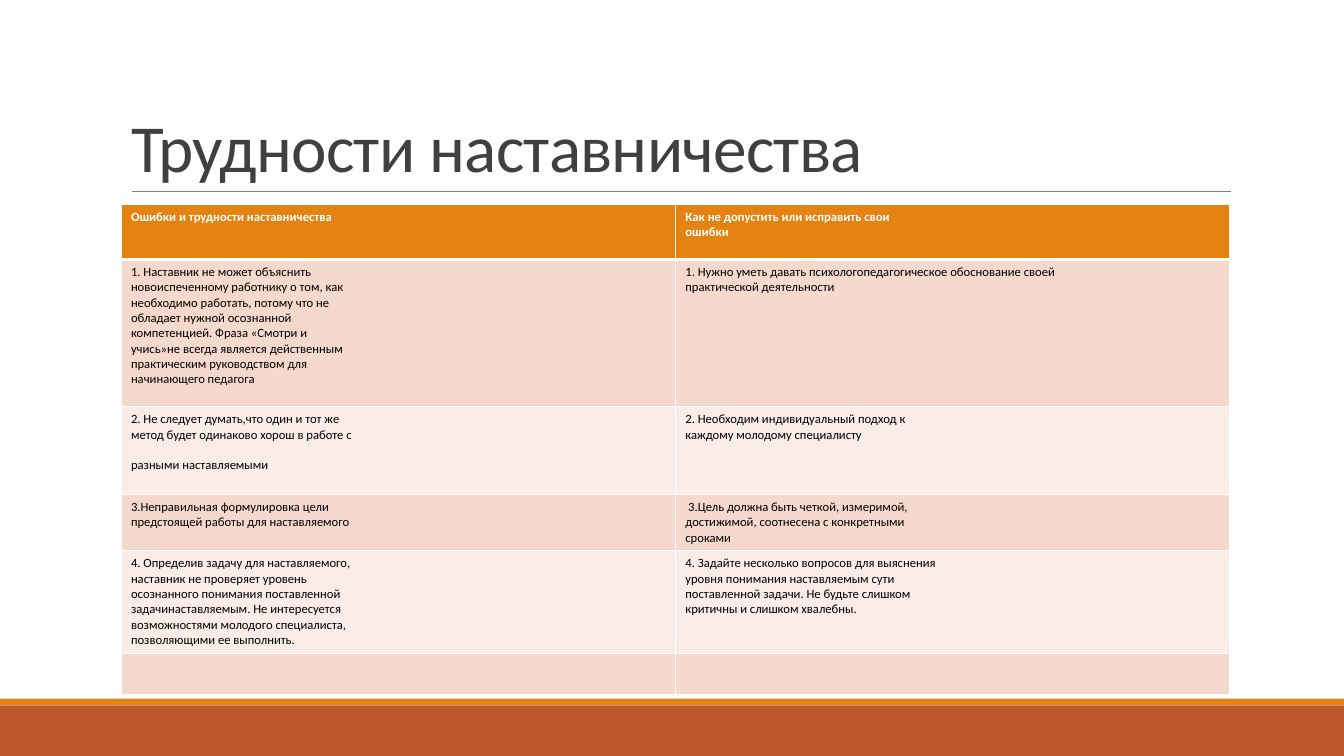
"""Build a slide with a two-column table on the difficulties of mentoring."""
import pptx
import pptx.dml.color
import pptx.enum.shapes
import pptx.enum.text
import pptx.oxml
import pptx.oxml.ns
import pptx.util

WIDTH, HEIGHT = pptx.util.Inches(13.33), pptx.util.Inches(7.5)
ORANGE, RUST, WHITE, BLACK = "E48312", "BD582C", "FFFFFF", "000000"
BANDS = ["F5D9CC", "FAEDE7"]
ROW_HEIGHTS = [0.55, 1.46, 0.87, 0.56, 1.02, 0.41]
GAP_BEFORE = "разными наставляемыми"
ROWS = [
    (["Ошибки и трудности наставничества"],
     ["Как не допустить или исправить свои", "ошибки"]),
    (["1. Наставник не может объяснить",
      "новоиспеченному работнику о том, как",
      "необходимо работать, потому что не",
      "обладает нужной осознанной",
      "компетенцией. Фраза «Смотри и",
      "учись»не всегда является действенным",
      "практическим руководством для",
      "начинающего педагога"],
     ["1. Нужно уметь давать психологопедагогическое обоснование своей",
      "практической деятельности"]),
    (["2. Не следует думать,что один и тот же",
      "метод будет одинаково хорош в работе с",
      GAP_BEFORE],
     ["2. Необходим индивидуальный подход к",
      "каждому молодому специалисту"]),
    (["3.Неправильная формулировка цели",
      "предстоящей работы для наставляемого"],
     [" 3.Цель должна быть четкой, измеримой,",
      "достижимой, соотнесена с конкретными",
      "сроками"]),
    (["4. Определив задачу для наставляемого,",
      "наставник не проверяет уровень",
      "осознанного понимания поставленной",
      "задачинаставляемым. Не интересуется",
      "возможностями молодого специалиста,",
      "позволяющими ее выполнить."],
     ["4. Задайте несколько вопросов для выяснения",
      "уровня понимания наставляемым сути",
      "поставленной задачи. Не будьте слишком",
      "критичны и слишком хвалебны."]),
    ([], []),
]


def across(share):
    """Return a share of the slide's width."""
    return round(WIDTH * share)


def down(share):
    """Return a share of the slide's height."""
    return round(HEIGHT * share)


def colour(target, value):
    """Give a fill or font a solid colour."""
    if hasattr(target, "solid"):
        target.solid()
        target = target.fore_color
    else:
        target = target.color
    target.rgb = pptx.dml.color.RGBColor.from_string(value)


def apply(target, values):
    """Set the attributes named in a dict."""
    for name, value in values.items():
        setattr(target, name, value)


def add_span(para, words, size, shade, bold=False):
    """Add a formatted run to a paragraph."""
    span = para.add_run()
    span.text = words
    apply(span.font, {"name": "Calibri", "size": pptx.util.Pt(size), "bold": bold})
    colour(span.font, shade)
    return span


def add_title(page, words):
    """Place and format the title placeholder."""
    title = page.shapes.title
    apply(title, {"left": across(0.09), "top": down(0.041),
                  "width": across(0.825), "height": down(0.212)})
    apply(title.text_frame, {"word_wrap": True,
                             "auto_size": pptx.enum.text.MSO_AUTO_SIZE.NONE,
                             "vertical_anchor": pptx.enum.text.MSO_ANCHOR.BOTTOM})
    para = title.text_frame.paragraphs[0]
    apply(para, {"line_spacing": 0.85, "alignment": pptx.enum.text.PP_ALIGN.LEFT})
    span = add_span(para, words, 48, "404040")
    span.font._element.set("spc", "-50")


def add_bar(page, top, height, shade):
    """Add a full-width bar."""
    bar = page.shapes.add_shape(pptx.enum.shapes.MSO_SHAPE.RECTANGLE,
                                0, down(top), WIDTH, down(height))
    bar.shadow.inherit = False
    colour(bar.fill, shade)
    bar.line.fill.background()


def add_rule(page, left, right, top):
    """Add the thin horizontal line under the title."""
    rule = page.shapes.add_connector(pptx.enum.shapes.MSO_CONNECTOR.STRAIGHT,
                                     across(left), down(top), across(right), down(top))
    colour(rule.line.fill, "808080")
    rule.line.width = pptx.util.Pt(0.5)
    properties = rule._element.spPr
    properties.append(pptx.oxml.parse_xml(
        f'<a:effectLst {pptx.oxml.ns.nsdecls("a")}/>'))


def add_borders(cell, widths):
    """Give a cell white borders, with widths in points by side."""
    properties = cell._tc.get_or_add_tcPr()
    for place, (side, width) in enumerate(widths.items()):
        properties.insert(place, pptx.oxml.parse_xml(
            f'<a:ln{side} {pptx.oxml.ns.nsdecls("a")} w="{pptx.util.Pt(width)}">'
            f'<a:solidFill><a:srgbClr val="{WHITE}"/></a:solidFill></a:ln{side}>'))


def fill_cell(cell, lines, row):
    """Write a cell's lines and format it as header or band."""
    header = row == 0
    for index, words in enumerate(lines):
        frame = cell.text_frame
        para = frame.add_paragraph() if index else frame.paragraphs[0]
        add_span(para, words, 9, WHITE if header else BLACK, header)
        if words == GAP_BEFORE:
            para.space_before = pptx.util.Pt(11)
    colour(cell.fill, ORANGE if header else BANDS[(row - 1) % 2])
    add_borders(cell, {"L": 1, "R": 1, "T": 3 if row == 1 else 1,
                       "B": 3 if header else 1})


def add_table(page, rows, heights):
    """Add the table of difficulties and remedies."""
    table = page.shapes.add_table(len(rows), 2, across(0.09), down(0.27), across(0.825),
                                  pptx.util.Inches(sum(heights))).table
    for row, (pair, height) in enumerate(zip(rows, heights)):
        table.rows[row].height = pptx.util.Inches(height)
        for column, lines in enumerate(pair):
            fill_cell(table.cell(row, column), lines, row)


def main():
    """Build and save the deck."""
    deck = pptx.Presentation()
    apply(deck, {"slide_width": WIDTH, "slide_height": HEIGHT})
    page = deck.slides.add_slide(deck.slide_layouts[5])
    add_bar(page, 0.933, 0.067, RUST)
    add_bar(page, 0.924, 0.009, ORANGE)
    add_rule(page, 0.098, 0.916, 0.253)
    add_title(page, "Трудности наставничества")
    add_table(page, ROWS, ROW_HEIGHTS)
    deck.save("out.pptx")


if __name__ == "__main__":
    main()
